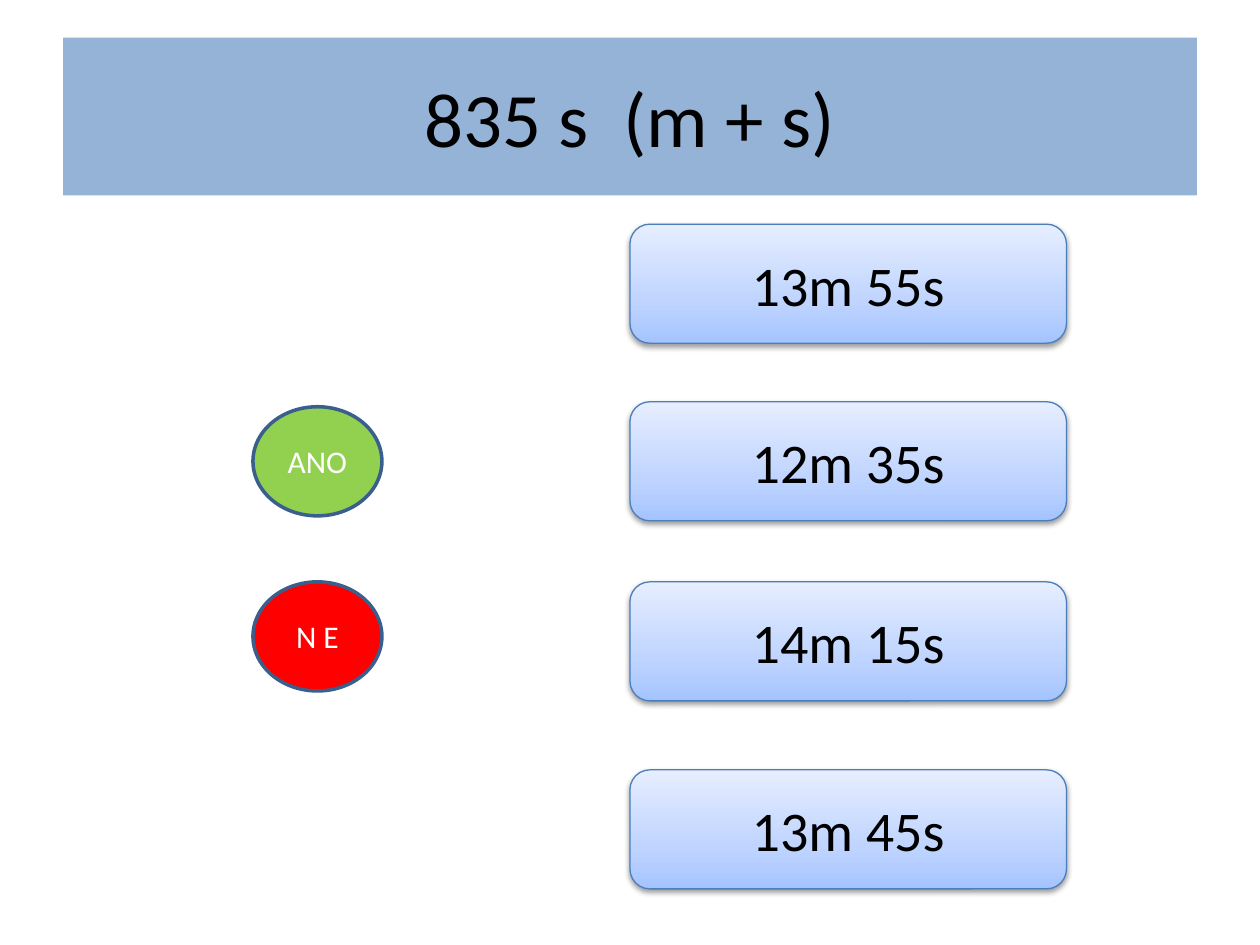
from copy import deepcopy

from lxml import etree
from pptx import Presentation
from pptx.dml.color import RGBColor
from pptx.enum.shapes import MSO_SHAPE
from pptx.enum.text import MSO_ANCHOR, PP_ALIGN
from pptx.oxml.ns import qn
from pptx.util import Cm, Pt

OVAL, ROUNDED = MSO_SHAPE.OVAL, MSO_SHAPE.ROUNDED_RECTANGLE
CENTER, MIDDLE = PP_ALIGN.CENTER, MSO_ANCHOR.MIDDLE
TITLE_ONLY = 5

FONT = "Calibri"
COLORS = {
    "banner": "95B3D7",
    "yes": "92D050",
    "no": "FF0000",
    "verdict_line": "3A5F8C",
    "answer_line": "4B7EBC",
    "dark": "000000",
    "light": "FFFFFF",
}
ANSWER_GRADIENT = [(0, "A4C4FF"), (0.35, "BFD4FF"), (1, "E6EEFF")]

TASK = "835 s  (m + s)"
# Text, fill and top edge in cm
VERDICTS = [("ANO", "yes", 8.2), ("N E", "no", 11.73)]
# Text and top edge in cm
ANSWERS = [("13m 55s", 4.52), ("12m 35s", 8.1), ("14m 15s", 11.73), ("13m 45s", 15.52)]


def rgb(name):
    return RGBColor.from_string(COLORS[name])


def write(shape, text, size, color):
    frame = shape.text_frame
    frame.text = text
    frame.word_wrap = True
    frame.vertical_anchor = MIDDLE
    paragraph = frame.paragraphs[0]
    paragraph.alignment = CENTER
    font = paragraph.runs[0].font
    font.name, font.size = FONT, Pt(size)
    font.color.rgb = rgb(color)


def outline(shape, color, width):
    shape.line.color.rgb = rgb(color)
    shape.line.width = Pt(width)


def fill_gradient(shape, stops):
    """Fill from bottom to top with any number of stops."""
    shape.fill.gradient()
    shape.fill.gradient_angle = 90
    stop_list = shape.fill._xPr.find(qn("a:gradFill")).find(qn("a:gsLst"))
    while len(stop_list) < len(stops):
        stop_list.append(deepcopy(stop_list[0]))
    for stop, (position, color) in zip(shape.fill.gradient_stops, stops):
        stop.position = position
        stop.color.rgb = RGBColor.from_string(color)


def drop_shadow(shape):
    """Cast a soft shadow straight down."""
    shape.shadow.inherit = False
    effects = shape._element.spPr.find(qn("a:effectLst"))
    shadow = etree.SubElement(effects, qn("a:outerShdw"), blurRad="40000",
                              dist="20000", dir="5400000", rotWithShape="0")
    color = etree.SubElement(shadow, qn("a:srgbClr"), val=COLORS["dark"])
    etree.SubElement(color, qn("a:alpha"), val="38000")


def add_banner(slide):
    banner = slide.shapes.title
    banner.left, banner.top = Cm(1.27), Cm(0.76)
    banner.width, banner.height = Cm(22.86), Cm(3.18)
    banner.fill.solid()
    banner.fill.fore_color.rgb = rgb("banner")
    write(banner, TASK, 44, "dark")


def add_verdict(slide, text, color, top):
    verdict = slide.shapes.add_shape(OVAL, Cm(5.1), Cm(top), Cm(2.6), Cm(2.2))
    verdict.shadow.inherit = False
    verdict.fill.solid()
    verdict.fill.fore_color.rgb = rgb(color)
    outline(verdict, "verdict_line", 2)
    write(verdict, text, 18, "light")


def add_answer(slide, text, top):
    answer = slide.shapes.add_shape(ROUNDED, Cm(12.7), Cm(top), Cm(8.8), Cm(2.4))
    fill_gradient(answer, ANSWER_GRADIENT)
    outline(answer, "answer_line", 0.75)
    drop_shadow(answer)
    write(answer, text, 32, "dark")


def main():
    deck = Presentation()
    deck.slide_width, deck.slide_height = Cm(25.4), Cm(19.05)
    slide = deck.slides.add_slide(deck.slide_layouts[TITLE_ONLY])
    add_banner(slide)
    for verdict in VERDICTS:
        add_verdict(slide, *verdict)
    for answer in ANSWERS:
        add_answer(slide, *answer)
    deck.save("out.pptx")


if __name__ == "__main__":
    main()
